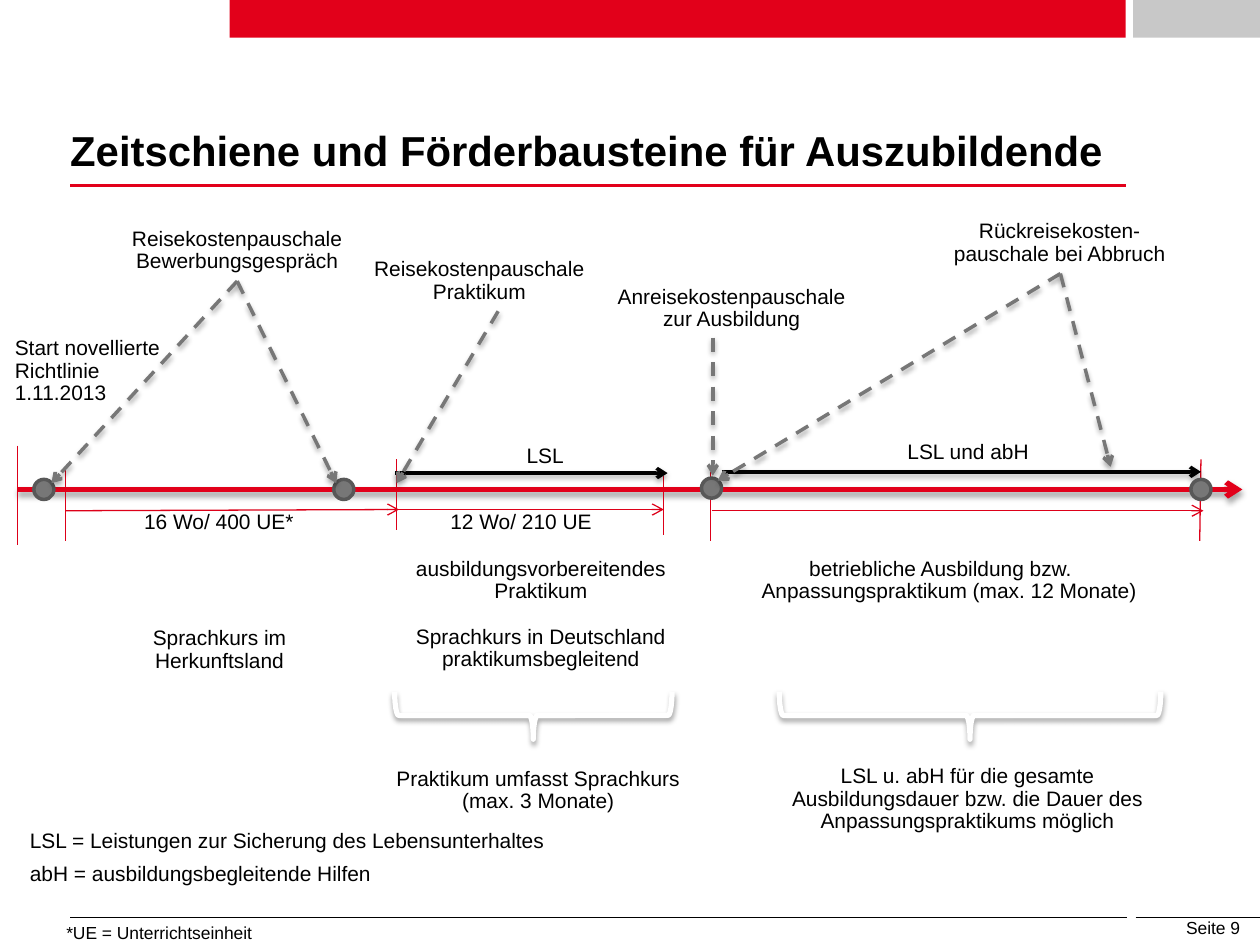
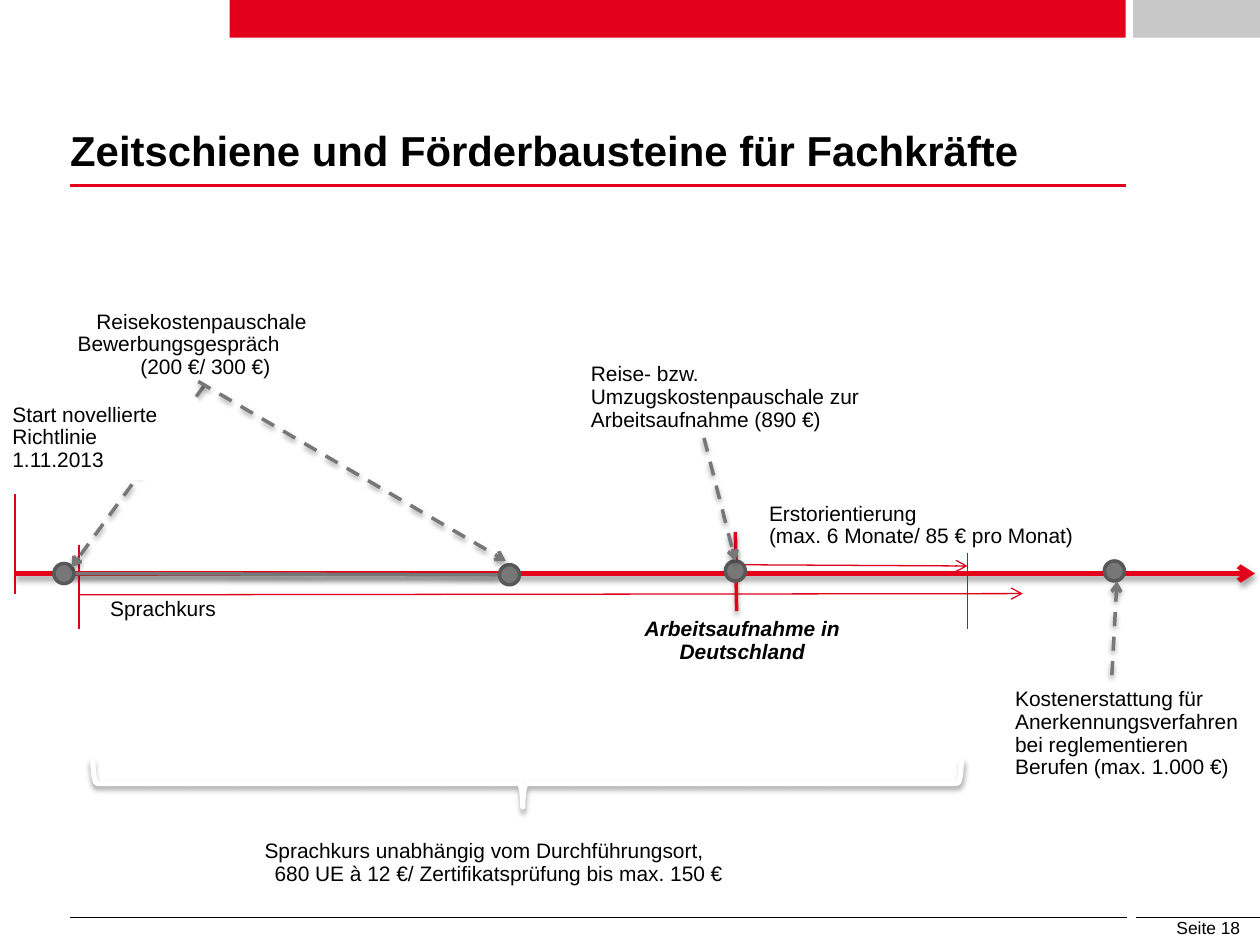
from pptx import Presentation
from pptx.dml.color import RGBColor
from pptx.enum.dml import MSO_LINE
from pptx.enum.shapes import MSO_CONNECTOR, MSO_SHAPE
from pptx.enum.text import MSO_ANCHOR, PP_ALIGN
from pptx.oxml.ns import qn
from pptx.util import Inches, Pt
from lxml.etree import SubElement

WIDTH, HEIGHT = 10.04, 7.53
FONT = "Arial"
RED, TICK_RED, GREY = "E2001A", "DD0019", "777777"
DARK, SILVER, BLACK, WHITE = "585858", "C8C8C8", "000000", "FFFFFF"
LEFT, BAND_RIGHT = 0.56, 8.97
FOOT_Y = 7.31
DOT, BRACE_DEPTH = 0.16, 0.38
LINE_STEP = 0.185
CENTER, RIGHT = PP_ALIGN.CENTER, PP_ALIGN.RIGHT

# name: colour, width in points, dashed, arrowhead, shadow
LINE_STYLES = {
    "rule": (RED, 1.5, False, False, False),
    "footer": (BLACK, 0.5, False, False, False),
    "axis": (RED, 3, False, True, True),
    "tick": (TICK_RED, 0.75, False, False, False),
    "period": (TICK_RED, 0.75, False, True, False),
    "course": (GREY, 2, False, False, True),
    "milestone": (RED, 2, False, False, True),
    "benefit": (BLACK, 2, False, True, True),
    "pointer": (GREY, 2, True, True, True),
}

TRAINEES = {
    "title": "Zeitschiene und Förderbausteine für Auszubildende",
    "number": 9,
    # style: start x, start y, end x, end y
    "lines": {
        "axis": [(0.14, 3.9, 9.9, 3.9)],
        "tick": [(0.14, 3.55, 0.14, 4.34), (0.52, 3.74, 0.52, 4.31),
                 (3.16, 3.66, 3.16, 4.22), (5.29, 3.79, 5.29, 4.26),
                 (5.66, 3.76, 5.66, 4.31), (9.57, 3.66, 9.56, 4.31)],
        "period": [(0.52, 4.07, 3.18, 4.06), (3.13, 4.06, 5.29, 4.06),
                   (5.67, 4.07, 9.59, 4.07)],
        "benefit": [(3.15, 3.77, 5.32, 3.77), (5.75, 3.76, 9.57, 3.76)],
    },
    "dots": [(0.35, 3.9), (2.74, 3.9), (5.67, 3.89), (9.57, 3.9)],
    "pointers": [(1.89, 2.24, 0.41, 3.85), (1.89, 2.24, 2.68, 3.85),
                 (3.97, 2.48, 3.16, 3.85), (5.68, 2.69, 5.68, 3.79),
                 (8.45, 2.18, 5.72, 3.83), (8.45, 2.18, 8.85, 3.72)],
    # left, top, width, text, options
    "labels": [
        (0.02, 2.64, 1.57, "Start novellierte\vRichtlinie\v1.11.2013", {}),
        (0.85, 1.77, 2.08, "Reisekostenpauschale\vBewerbungsgespräch", {"align": CENTER}),
        (2.8, 2.01, 2.04, "Reisekostenpauschale\vPraktikum", {"align": CENTER}),
        (4.82, 2.23, 2.02, "Anreisekostenpauschale\vzur Ausbildung", {"align": CENTER}),
        (7.46, 1.71, 1.97, "Rückreisekosten-\vpauschale bei Abbruch", {"align": CENTER}),
        (2.81, 3.5, 3.07, "LSL", {"align": CENTER}),
        (6.18, 3.47, 3.07, "LSL und abH", {"align": CENTER}),
        (1.05, 4.03, 1.41, "16 Wo/ 400 UE*", {}),
        (3.49, 4.03, 1.42, "12 Wo/ 210 UE", {}),
        (1.05, 4.95, 1.4, "Sprachkurs im\vHerkunftsland", {"align": CENTER}),
        (3.1, 4.4, 2.42, "ausbildungsvorbereitendes\vPraktikum\n"
         "Sprachkurs in Deutschland\vpraktikumsbegleitend",
         {"align": CENTER, "gap": 13}),
        (5.55, 4.4, 4.04, "betriebliche Ausbildung bzw.\n"
         "Anpassungspraktikum (max. 12 Monate)", {"indents": (0.8, 0.42), "gap": 0}),
        (2.96, 6.07, 2.66, "Praktikum umfasst Sprachkurs\v(max. 3 Monate)",
         {"align": CENTER}),
        (6.17, 6.05, 3.08, "LSL u. abH für die gesamte\vAusbildungsdauer bzw. die Dauer des\v"
         "Anpassungspraktikums möglich", {"align": CENTER}),
        (0.14, 6.57, 4.77, "LSL = Leistungen zur Sicherung des Lebensunterhaltes\n"
         "abH = ausbildungsbegleitende Hilfen", {}),
        (0.43, 7.32, 1.74, "*UE = Unterrichtseinheit", {"size": 10}),
    ],
    # centre x, centre y, span, position of the tip
    "braces": [(4.25, 5.7, 2.21, 0.5), (7.73, 5.7, 3.04, 0.5)],
}

SKILLED = {
    "title": "Zeitschiene und Förderbausteine für Fachkräfte",
    "number": 18,
    "lines": {
        "axis": [(0.12, 4.57, 10, 4.57)],
        "tick": [(0.12, 3.94, 0.12, 4.73), (0.63, 4.34, 0.63, 5.01),
                 (7.71, 4.41, 7.71, 5.01)],
        "period": [(0.63, 4.74, 8.15, 4.73), (5.91, 4.5, 7.71, 4.51)],
        "course": [(0.59, 4.57, 3.98, 4.58)],
        "milestone": [(5.86, 4.24, 5.87, 4.87)],
    },
    "dots": [(0.51, 4.57), (4.06, 4.58), (5.86, 4.55), (8.88, 4.55)],
    "pointers": [(1.63, 3.07, 0.57, 4.52), (1.58, 3.04, 4.03, 4.47),
                 (5.61, 3.49, 5.86, 4.47), (8.86, 5.38, 8.9, 4.63)],
    "labels": [
        (0, 3.17, 1.58, "Start novellierte\vRichtlinie\v1.11.2013", {"fill": WHITE}),
        (0.37, 2.43, 2.52, "Reisekostenpauschale\nBewerbungsgespräch\n(200 €/ 300 €)",
         {"indents": (0.3, 0.15, 0.65), "gap": 0}),
        (4.61, 2.85, 2.45, "Reise- bzw.\vUmzugskostenpauschale zur\v"
         "Arbeitsaufnahme (890 €)", {}),
        (6.03, 3.96, 2.84, "Erstorientierung\v(max. 6 Monate/ 85 € pro Monat)", {}),
        (0.78, 4.72, 1.5, "Sprachkurs", {}),
        (4.97, 4.88, 1.89, "Arbeitsaufnahme in\vDeutschland",
         {"align": CENTER, "bold": True, "italic": True}),
        (7.99, 5.44, 2.05, "Kostenerstattung für\vAnerkennungsverfahren\v"
         "bei reglementieren\vBerufen (max. 1.000 €)", {}),
        (1.86, 6.65, 4.23, "Sprachkurs unabhängig vom Durchführungsort,\n"
         "680 UE à 12 €/ Zertifikatsprüfung bis max. 150 €",
         {"indents": (0.15, 0.23), "gap": 0}),
    ],
    "braces": [(4.2, 6.24, 6.92, 0.495)],
}


def color(code):
    return RGBColor.from_string(code)


def add_shadow(effects):
    """Fill an effect list with the soft shadow below a shape."""
    shadow = SubElement(effects, qn("a:outerShdw"), blurRad=str(Pt(3.1)),
                        dist=str(Pt(1.8)), dir="5400000", rotWithShape="0")
    black = SubElement(shadow, qn("a:srgbClr"), val=BLACK)
    SubElement(black, qn("a:alpha"), val="35000")


def add_line(page, style, x1, y1, x2, y2):
    code, width, dashed, arrow, shadow = LINE_STYLES[style]
    line = page.shapes.add_connector(MSO_CONNECTOR.STRAIGHT, *map(Inches, (x1, y1, x2, y2)))
    line.line.color.rgb = color(code)
    line.line.width = Pt(width)
    if dashed:
        line.line.dash_style = MSO_LINE.DASH
    properties = line._element.spPr
    if arrow:
        SubElement(properties.find(qn("a:ln")), qn("a:tailEnd"), type="arrow")
    effects = SubElement(properties, qn("a:effectLst"))
    if shadow:
        add_shadow(effects)


def add_shape(page, kind, left, top, width, height, fill=None, outline=None, weight=1):
    shape = page.shapes.add_shape(kind, *map(Inches, (left, top, width, height)))
    shape.shadow.inherit = False
    if fill:
        shape.fill.solid()
        shape.fill.fore_color.rgb = color(fill)
    else:
        shape.fill.background()
    if outline:
        shape.line.color.rgb = color(outline)
        shape.line.width = Pt(weight)
    else:
        shape.line.fill.background()
    return shape


def add_label(page, left, top, width, text, size=12, align=PP_ALIGN.LEFT, gap=6,
              indents=(), bold=False, italic=False, fill=None):
    """Text box; gap is the space between paragraphs, indents their left margins."""
    height = 0.1 + LINE_STEP * (1 + text.count("\v") + text.count("\n"))
    box = page.shapes.add_textbox(*map(Inches, (left, top, width, height)))
    if fill:
        box.fill.solid()
        box.fill.fore_color.rgb = color(fill)
    frame = box.text_frame
    frame.word_wrap = True
    frame.text = text
    for index, para in enumerate(frame.paragraphs):
        para.alignment = align
        para.line_spacing = 0.9
        if index:
            para.space_before = Pt(gap)
        if indents:
            properties = para._p.get_or_add_pPr()
            properties.set("marL", str(Inches(indents[index])))
            properties.set("indent", "0")
        for span in para.runs:
            span.font.name = FONT
            span.font.size = Pt(size)
            span.font.bold = bold
            span.font.italic = italic
            span.font.color.rgb = color(BLACK)
    return box


def add_dot(page, x, y):
    add_shape(page, MSO_SHAPE.FLOWCHART_CONNECTOR, x - DOT / 2, y - DOT / 2, DOT, DOT,
              GREY, DARK, 2)


def add_brace(page, x, y, span, tip):
    brace = add_shape(page, MSO_SHAPE.LEFT_BRACE, x - BRACE_DEPTH / 2, y - span / 2,
                      BRACE_DEPTH, span, outline=WHITE, weight=3)
    brace.rotation = 270
    brace.adjustments[1] = tip
    add_shadow(brace._element.spPr.find(qn("a:effectLst")))


def add_frame(page, title, number):
    """Bands, title, rules and page number common to all slides."""
    for left, right, fill in ((1.83, BAND_RIGHT, RED), (9.03, WIDTH, SILVER)):
        add_shape(page, MSO_SHAPE.RECTANGLE, left, 0, right - left, 0.3, fill)
    add_line(page, "rule", LEFT, 1.48, BAND_RIGHT, 1.48)
    for left, right in ((LEFT, 8.98), (9.05, WIDTH)):
        add_line(page, "footer", left, FOOT_Y, right, FOOT_Y)
    add_label(page, 8.54, 7.28, 1.44, f"Seite {number}", size=10, align=RIGHT)
    heading = add_label(page, LEFT, 0.9, 8.44, title, size=24, bold=True)
    heading.height = Inches(0.5)
    frame = heading.text_frame
    frame.vertical_anchor = MSO_ANCHOR.BOTTOM
    frame.margin_left = frame.margin_right = frame.margin_top = frame.margin_bottom = 0


def add_timeline(deck, content):
    page = deck.slides.add_slide(deck.slide_layouts[6])
    add_frame(page, content["title"], content["number"])
    for style, lines in content["lines"].items():
        for line in lines:
            add_line(page, style, *line)
    for dot in content["dots"]:
        add_dot(page, *dot)
    for pointer in content["pointers"]:
        add_line(page, "pointer", *pointer)
    for *place, options in content["labels"]:
        add_label(page, *place, **options)
    for brace in content["braces"]:
        add_brace(page, *brace)


def main():
    deck = Presentation()
    deck.slide_width, deck.slide_height = Inches(WIDTH), Inches(HEIGHT)
    for content in (TRAINEES, SKILLED):
        add_timeline(deck, content)
    deck.save("out.pptx")


if __name__ == "__main__":
    main()
